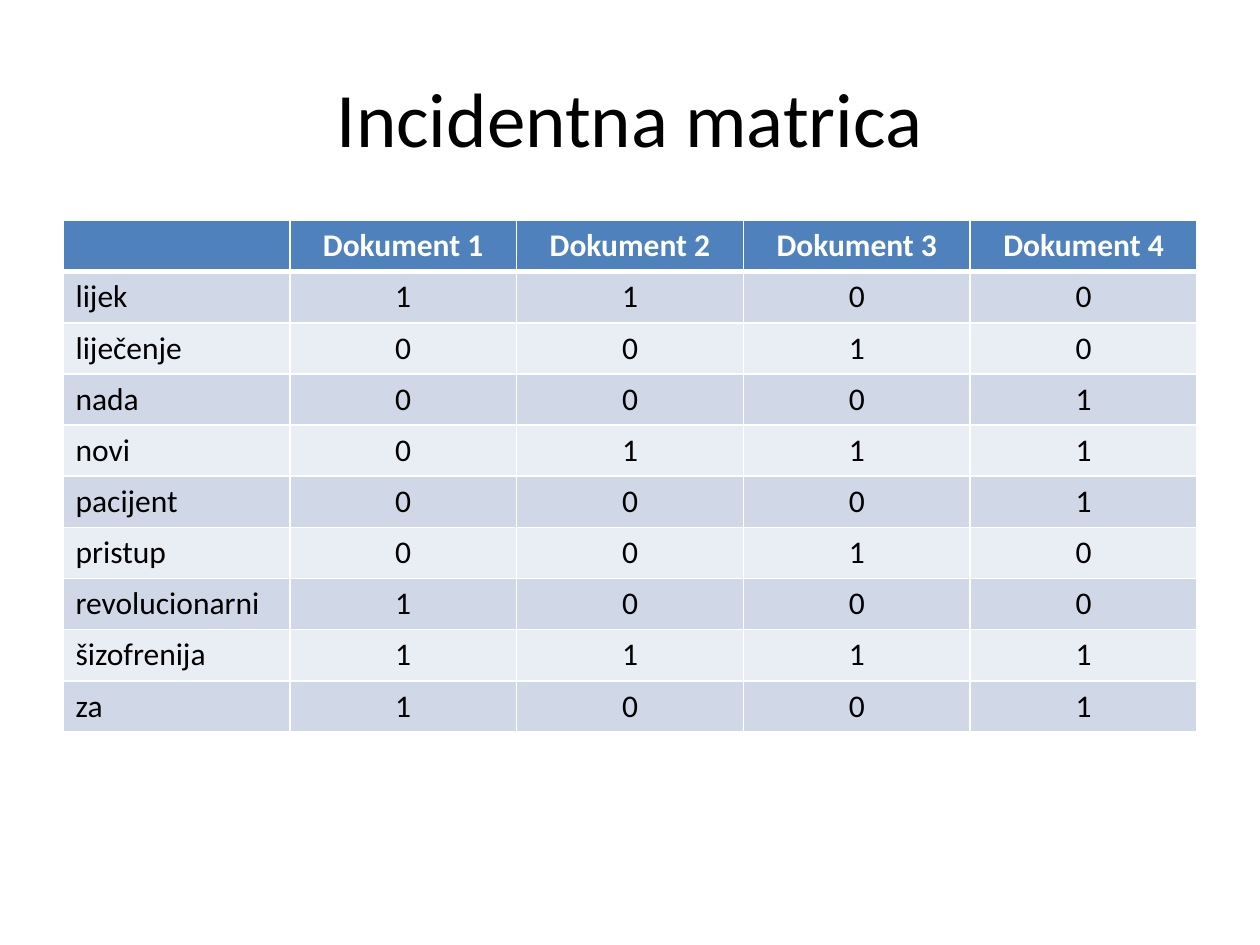
import dataclasses

import lxml.etree
import pptx
import pptx.dml.color
import pptx.enum.text
import pptx.oxml.ns
import pptx.util

ALIGN = pptx.enum.text.PP_ALIGN
ANCHOR = pptx.enum.text.MSO_ANCHOR


@dataclasses.dataclass(frozen=True)
class Theme:
    font: str = "Calibri"
    title_size: int = 44
    table_size: int = 18
    text: str = "000000"
    light: str = "FFFFFF"
    header: str = "4F81BD"
    bands: tuple = ("D0D8E8", "E9EDF4")
    thin: int = 1
    thick: int = 3


THEME = Theme()

# Slide grid: 20 columns by 30 rows
WIDTH, HEIGHT = pptx.util.Inches(10), pptx.util.Inches(7.5)
COLUMN, ROW = WIDTH / 20, HEIGHT / 30

DOCUMENTS = ["Dokument 1", "Dokument 2", "Dokument 3", "Dokument 4"]
INCIDENCE = {
    "lijek": (1, 1, 0, 0),
    "liječenje": (0, 0, 1, 0),
    "nada": (0, 0, 0, 1),
    "novi": (0, 1, 1, 1),
    "pacijent": (0, 0, 0, 1),
    "pristup": (0, 0, 1, 0),
    "revolucionarni": (1, 0, 0, 0),
    "šizofrenija": (1, 1, 1, 1),
    "za": (1, 0, 0, 1),
}


def grid_box(column, row, columns, rows):
    return (int(column * COLUMN), int(row * ROW),
            int(columns * COLUMN), int(rows * ROW))


def rgb(color):
    return pptx.dml.color.RGBColor.from_string(color)


def write_text(tf, text, *, size, color=THEME.text, bold=False, align=ALIGN.LEFT):
    p = tf.paragraphs[0]
    p.alignment = align
    r = p.add_run()
    r.text = text
    r.font.name = THEME.font
    r.font.size = pptx.util.Pt(size)
    r.font.bold = bold
    r.font.color.rgb = rgb(color)


def set_borders(cell, **widths):
    """Draw light cell borders; widths are points keyed by side (L, R, T, B)."""
    qn = pptx.oxml.ns.qn
    tc_pr = cell._tc.get_or_add_tcPr()
    for side, width in widths.items():
        line = lxml.etree.SubElement(tc_pr, qn(f"a:ln{side}"),
                                     w=str(pptx.util.Pt(width)))
        fill = lxml.etree.SubElement(line, qn("a:solidFill"))
        lxml.etree.SubElement(fill, qn("a:srgbClr"), val=THEME.light)


def add_title(s, box, text):
    tf = s.shapes.add_textbox(*box).text_frame
    tf.word_wrap = True
    tf.vertical_anchor = ANCHOR.MIDDLE
    write_text(tf, text, size=THEME.title_size, align=ALIGN.CENTER)


def add_matrix(s, box, documents, incidence):
    rows = [["", *documents]]
    rows += [[term, *map(str, values)] for term, values in incidence.items()]
    table = s.shapes.add_table(len(rows), len(rows[0]), *box).table

    for i, row in enumerate(rows):
        header = i == 0
        fill = THEME.header if header else THEME.bands[(i - 1) % 2]
        for j, text in enumerate(row):
            cell = table.cell(i, j)
            # The rule under the header is thicker than the others
            set_borders(cell, L=THEME.thin, R=THEME.thin,
                        T=THEME.thick if i == 1 else THEME.thin,
                        B=THEME.thick if header else THEME.thin)
            cell.fill.solid()
            cell.fill.fore_color.rgb = rgb(fill)
            if text:
                write_text(cell.text_frame, text, size=THEME.table_size,
                           color=THEME.light if header else THEME.text,
                           bold=header,
                           align=ALIGN.CENTER if j else ALIGN.LEFT)


def main():
    prs = pptx.Presentation()
    prs.slide_width, prs.slide_height = WIDTH, HEIGHT
    s = prs.slides.add_slide(prs.slide_layouts[6])

    # Heading
    add_title(s, grid_box(1, 1.2, 18, 5), "Incidentna matrica")

    # Terms by documents
    add_matrix(s, grid_box(1, 7, 18, 16.24), DOCUMENTS, INCIDENCE)

    prs.save("out.pptx")


if __name__ == "__main__":
    main()
